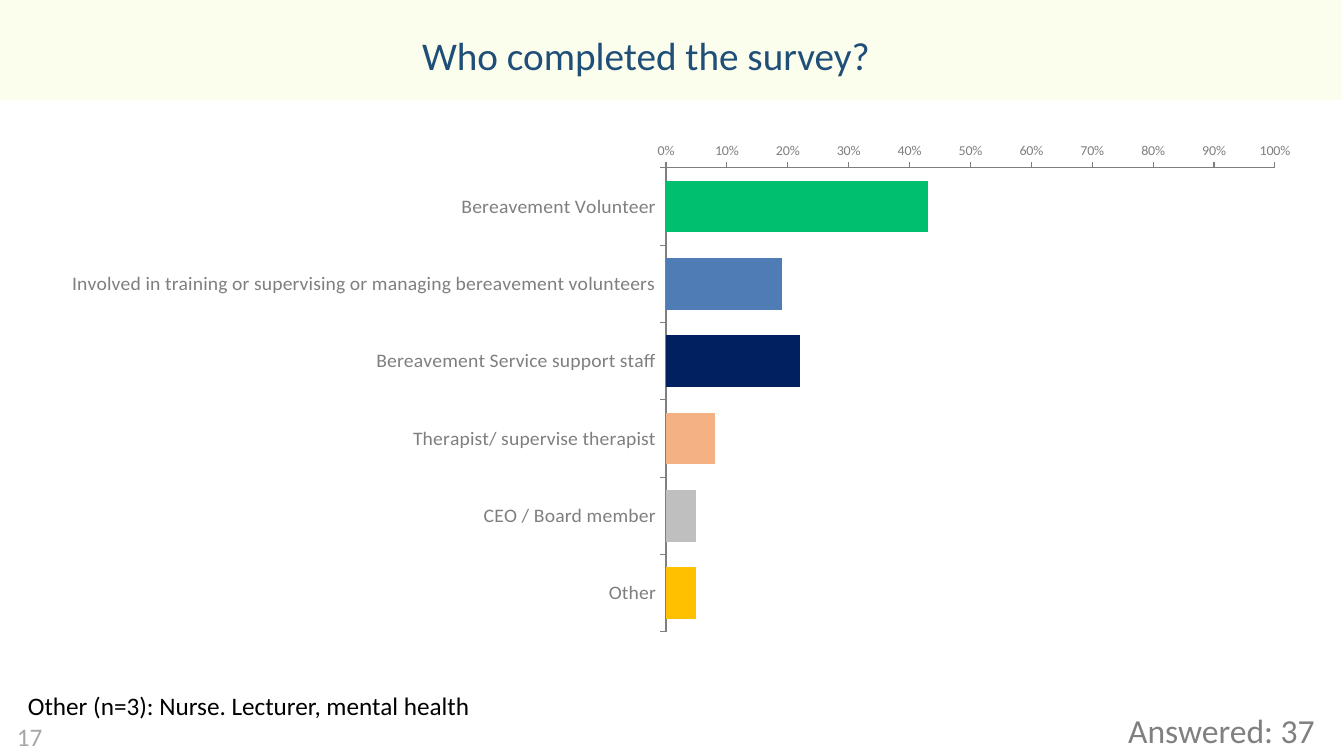
from lxml import etree
from pptx import Presentation
from pptx.chart.data import CategoryChartData
from pptx.dml.color import RGBColor
from pptx.enum.chart import XL_AXIS_CROSSES as Crosses, XL_CHART_TYPE as ChartType
from pptx.enum.chart import XL_TICK_LABEL_POSITION as LabelPosition, XL_TICK_MARK as TickMark
from pptx.enum.shapes import MSO_SHAPE as Preset
from pptx.enum.text import MSO_ANCHOR as Anchor, PP_ALIGN as Align
from pptx.oxml import parse_xml
from pptx.oxml.ns import nsdecls, qn
from pptx.util import Pt

NAVY = RGBColor(0x1F, 0x4E, 0x79)
CREAM = RGBColor(0xF9, 0xFE, 0xCE)
BLACK = RGBColor(0, 0, 0)
GREY = RGBColor(0x80, 0x80, 0x80)
AXIS_GREY = RGBColor(0x7F, 0x7F, 0x7F)
PALE_GREY = RGBColor(0xA6, 0xA6, 0xA6)
GREEN = RGBColor(0x00, 0xBF, 0x6F)
BLUE = RGBColor(0x50, 0x7C, 0xB6)
DARK_BLUE = RGBColor(0x00, 0x20, 0x60)
PEACH = RGBColor(0xF4, 0xB1, 0x83)
SILVER = RGBColor(0xBF, 0xBF, 0xBF)
GOLD = RGBColor(0xFF, 0xC0, 0x00)

FONT = "Calibri"
SLIDE_SIZE = (1344, 756)
BANNER_BOX = (0, -3, 1342, 103)
BANNER_OPACITY = 36
CHART_BOX = (47, 143, 1269, 524)
PLOT_BOX = (666, 153, 609, 478)

TITLE = ("Who completed the survey?", (412, 17, 675, 81), 28, NAVY)
ANSWERED = ("Answered: 37", (1118, 709, 209, 28), 24, GREY)
NOTES = [
    ("Other (n=3): Nurse. Lecturer, mental health", (18, 685, 524, 40), 18, BLACK),
    ("17", (7, 716, 58, 40), 18, PALE_GREY),
]
ROLES = [
    ("Bereavement Volunteer", 0.43, GREEN),
    ("Involved in training or supervising or managing bereavement volunteers", 0.19, BLUE),
    ("Bereavement Service support staff", 0.22, DARK_BLUE),
    ("Therapist/ supervise therapist", 0.08, PEACH),
    ("CEO / Board member", 0.05, SILVER),
    ("Other", 0.05, GOLD),
]


def px(length):
    """Turn px into EMU."""
    return round(length * 914400 / 100.8)


def write(shape, text, box, size, color):
    """Place a shape and fill it with one left-aligned paragraph."""
    shape.left, shape.top, shape.width, shape.height = map(px, box)
    shape.text_frame.word_wrap = True
    paragraph = shape.text_frame.paragraphs[0]
    paragraph.text = text
    paragraph.alignment = Align.LEFT
    paragraph.font.name, paragraph.font.size = FONT, Pt(size)
    paragraph.font.color.rgb = color
    return paragraph


def add_banner(slide):
    """Draw the translucent band behind the title."""
    banner = slide.shapes.add_shape(Preset.RECTANGLE, *map(px, BANNER_BOX))
    banner.shadow.inherit = False
    banner.line.fill.background()
    banner.fill.solid()
    banner.fill.fore_color.rgb = CREAM
    color = next(banner.element.spPr.iter(qn("a:srgbClr")))
    etree.SubElement(color, qn("a:alpha")).set("val", str(BANNER_OPACITY * 1000))
    return banner


def place_plot(chart):
    """Fix the inner plot area within the chart frame."""
    (left, top, width, height), (x, y, w, h) = CHART_BOX, PLOT_BOX
    parts = {"x": (x - left) / width, "y": (y - top) / height, "w": w / width, "h": h / height}
    modes = "".join(f'<c:{name}Mode val="edge"/>' for name in "xy")
    values = "".join(f'<c:{name} val="{part:.4f}"/>' for name, part in parts.items())
    layout = parse_xml(
        f'<c:layout {nsdecls("c")}><c:manualLayout><c:layoutTarget val="inner"/>'
        f"{modes}{values}</c:manualLayout></c:layout>"
    )
    plot_area = next(chart.element.iter(qn("c:plotArea")))
    for old in plot_area.findall(qn("c:layout")):
        plot_area.remove(old)
    plot_area.insert(0, layout)


def add_role_chart(slide):
    """Chart the share of answers by role."""
    data = CategoryChartData(number_format="0%")
    data.categories = [role for role, share, color in ROLES]
    data.add_series("Series 1", [share for role, share, color in ROLES])
    chart = slide.shapes.add_chart(ChartType.BAR_CLUSTERED, *map(px, CHART_BOX), data).chart
    chart.has_legend = chart.has_title = False
    chart.font.name, chart.font.size = FONT, Pt(18)
    chart.font.color.rgb = BLACK
    place_plot(chart)

    plot = chart.plots[0]
    plot.gap_width, plot.overlap, plot.vary_by_categories = 50, 100, False
    series = plot.series[0]
    series.format.fill.solid()
    series.format.fill.fore_color.rgb = GREEN
    for index, (role, share, color) in enumerate(ROLES):
        fill = series.points[index].format.fill
        fill.solid()
        fill.fore_color.rgb = color

    for axis, size in ((chart.category_axis, 14), (chart.value_axis, 10)):
        axis.has_major_gridlines = False
        axis.major_tick_mark, axis.minor_tick_mark = TickMark.OUTSIDE, TickMark.NONE
        axis.format.line.color.rgb = AXIS_GREY
        axis.format.line.width = Pt(0.75)
        axis.tick_labels.font.name, axis.tick_labels.font.size = FONT, Pt(size)
        axis.tick_labels.font.color.rgb = AXIS_GREY
    chart.category_axis.reverse_order = True
    chart.category_axis.crosses = Crosses.MAXIMUM
    chart.category_axis.tick_label_position = LabelPosition.LOW
    scale = chart.value_axis
    scale.minimum_scale, scale.maximum_scale, scale.major_unit = 0, 1, 0.1
    scale.tick_labels.number_format = "0%"
    scale.tick_labels.number_format_is_linked = False


def main():
    """Build the survey slide."""
    presentation = Presentation()
    presentation.slide_width, presentation.slide_height = map(px, SLIDE_SIZE)
    slide = presentation.slides.add_slide(presentation.slide_layouts[1])
    title, answered = slide.shapes.title, slide.placeholders[1]

    paragraph = write(answered, *ANSWERED)
    paragraph.line_spacing, paragraph.space_before = 0.9, Pt(10)
    properties = paragraph._p.get_or_add_pPr()
    properties.set("marL", "0")
    properties.set("indent", "0")
    etree.SubElement(properties, qn("a:buNone"))
    properties.insert_element_before(properties.find(qn("a:buNone")), "a:defRPr")

    add_role_chart(slide)
    banner = add_banner(slide)
    write(title, *TITLE).line_spacing = 0.9
    title.text_frame.vertical_anchor = Anchor.MIDDLE
    banner.element.addnext(title.element)
    for note in NOTES:
        write(slide.shapes.add_textbox(0, 0, 0, 0), *note)
    presentation.save("out.pptx")


if __name__ == "__main__":
    main()
